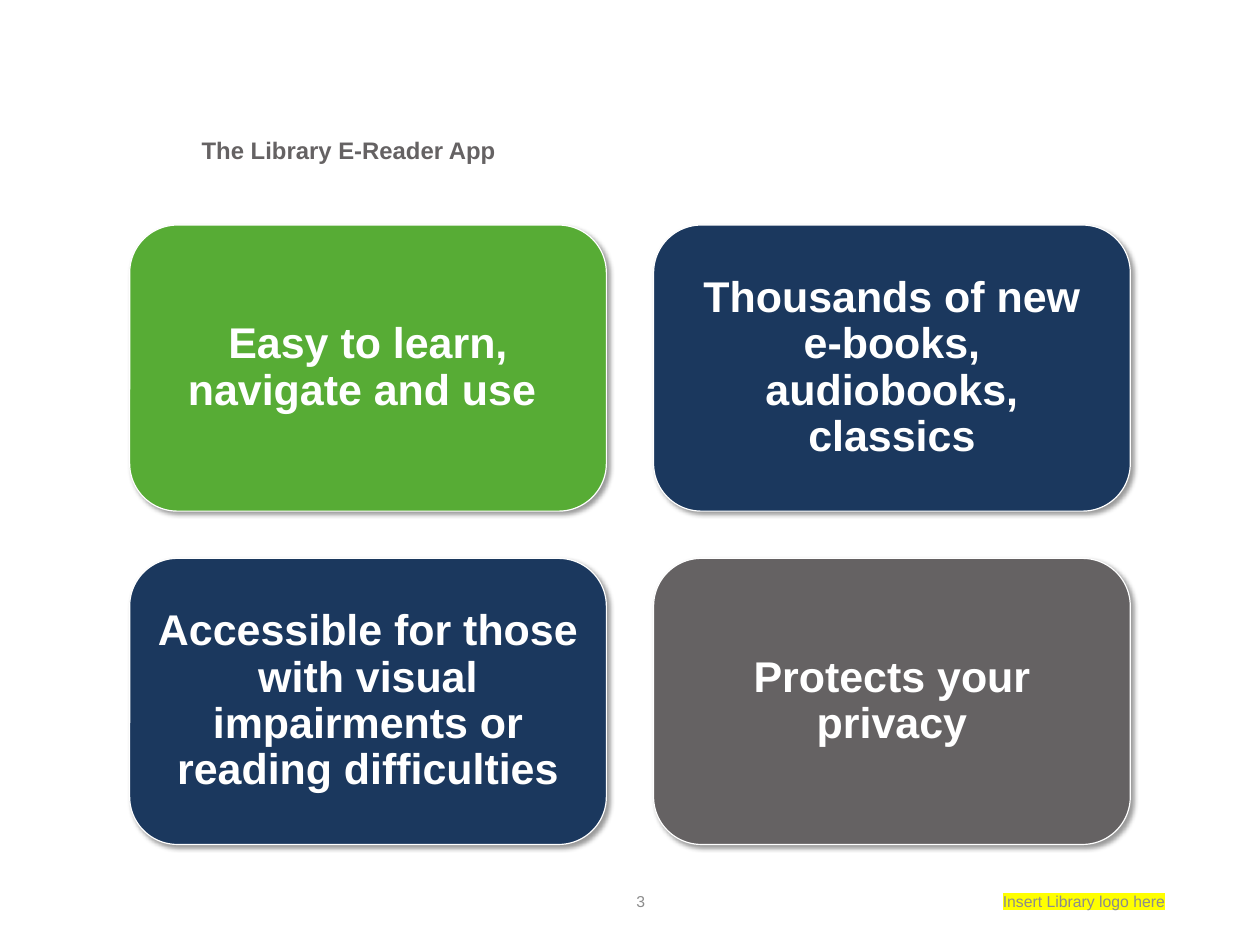
from lxml.etree import SubElement
from pptx import Presentation
from pptx.dml.color import RGBColor
from pptx.enum.shapes import MSO_SHAPE
from pptx.enum.text import MSO_ANCHOR, PP_ALIGN
from pptx.oxml.ns import qn
from pptx.util import Inches, Pt

GREEN, NAVY, GRAY = "57AC35", "1B385E", "656263"
FOOTER_GRAY, WHITE, YELLOW = "8C8C8C", "FFFFFF", "FFFF00"

CARD_WIDTH, CARD_HEIGHT, CARD_GAP = 5.55, 3.33, 0.55
CARDS_LEFT, CARDS_TOP = 1.51, 2.62
CARDS = [
    ("Easy to learn, navigate and use ", GREEN),
    ("Thousands of new e-books, audiobooks, classics", NAVY),
    ("Accessible for those with visual impairments or reading difficulties", NAVY),
    ("Protects your privacy", GRAY),
]


def color(hex_value):
    return RGBColor.from_string(hex_value)


class SlideBuilder:
    """Holds the font and the slide that elements are added to."""

    def __init__(self, slide, font_name="Arial"):
        self.slide = slide
        self.font_name = font_name

    def set_text(self, shape, text, size, text_color, bold=False, align=PP_ALIGN.LEFT):
        text_frame = shape.text_frame
        text_frame.word_wrap = True
        text_frame.text = text
        paragraph = text_frame.paragraphs[0]
        paragraph.alignment = align
        run = paragraph.runs[0]
        run.font.name = self.font_name
        run.font.size = Pt(size)
        run.font.bold = bold
        run.font.color.rgb = color(text_color)
        return run

    def title(self, text, left, top, width, height):
        box = self.slide.shapes.add_textbox(
            Inches(left), Inches(top), Inches(width), Inches(height))
        self.set_text(box, text, 20, GRAY, bold=True)

    def footer(self, text, left, width, highlight=None):
        box = self.slide.shapes.add_textbox(
            Inches(left), Inches(10.19), Inches(width), Inches(0.59))
        box.text_frame.vertical_anchor = MSO_ANCHOR.MIDDLE
        run = self.set_text(box, text, 13.2, FOOTER_GRAY, align=PP_ALIGN.RIGHT)
        if highlight:
            self.highlight(run, highlight)

    def highlight(self, run, hex_value):
        properties = run.font._element
        marker = SubElement(properties, qn("a:highlight"))
        SubElement(marker, qn("a:srgbClr"), val=hex_value)
        properties.find(qn("a:solidFill")).addnext(marker)

    def card(self, text, fill, left, top):
        shape = self.slide.shapes.add_shape(
            MSO_SHAPE.ROUNDED_RECTANGLE, Inches(left), Inches(top),
            Inches(CARD_WIDTH), Inches(CARD_HEIGHT))
        shape.fill.solid()
        shape.fill.fore_color.rgb = color(fill)
        shape.line.color.rgb = color(WHITE)
        shape.line.width = Pt(1)
        self.drop_shadow(shape)
        text_frame = shape.text_frame
        text_frame.vertical_anchor = MSO_ANCHOR.MIDDLE
        text_frame.margin_left = text_frame.margin_right = Inches(0.15)
        text_frame.margin_top = text_frame.margin_bottom = Inches(0.15)
        self.set_text(shape, text, 36, WHITE, bold=True, align=PP_ALIGN.CENTER)
        text_frame.paragraphs[0].line_spacing = 0.9

    def drop_shadow(self, shape):
        shape.shadow.inherit = False
        effects = shape._element.spPr.find(qn("a:effectLst"))
        shadow = SubElement(
            effects, qn("a:outerShdw"), blurRad=str(Pt(4)), dist=str(Pt(3)),
            dir=str(45 * 60000), algn="ctr", rotWithShape="0")
        shadow_color = SubElement(shadow, qn("a:srgbClr"), val="000000")
        SubElement(shadow_color, qn("a:alpha"), val="40000")


def main():
    presentation = Presentation()
    presentation.slide_width = Inches(14.67)
    presentation.slide_height = Inches(11)
    slide = presentation.slides.add_slide(presentation.slide_layouts[6])
    builder = SlideBuilder(slide)

    builder.title("The Library E-Reader App", 2.25, 1.53, 5.54, 0.44)
    builder.footer("Insert Library logo here", 8.71, 4.95, highlight=YELLOW)
    builder.footer("3", 4.31, 3.3)
    for index, (text, fill) in enumerate(CARDS):
        row, column = divmod(index, 2)
        builder.card(text, fill,
                     CARDS_LEFT + column * (CARD_WIDTH + CARD_GAP),
                     CARDS_TOP + row * (CARD_HEIGHT + CARD_GAP))

    presentation.save("out.pptx")


if __name__ == "__main__":
    main()
